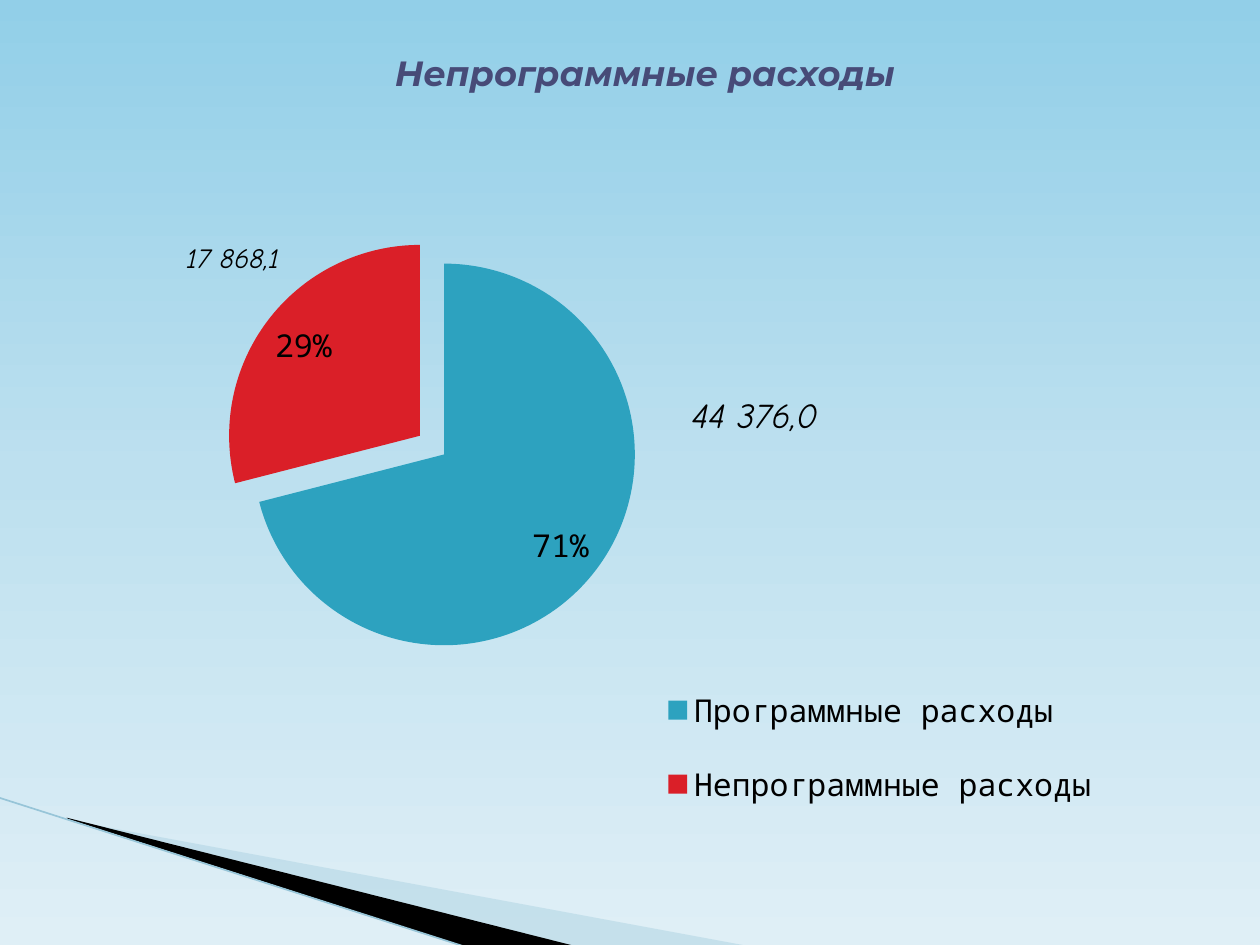
import pptx
import pptx.chart.data
import pptx.dml.color
import pptx.enum.chart
import pptx.enum.shapes
import pptx.enum.text
import pptx.oxml
import pptx.oxml.ns
import pptx.util
from lxml import etree
from pptx.util import Inches

COLORS = {
    "sky": "92CFE8", "haze": "BDE0EF", "horizon": "DFEFF6",
    "wedge": "A0CBDC", "black": "000000", "edge": "97C5D8",
    "title": "474B78", "program": "2DA2BF", "other": "DA1F28",
}
COLORS = {name: pptx.dml.color.RGBColor.from_string(value) for name, value in COLORS.items()}
qn = pptx.oxml.ns.qn


def format_font(font, color, **values):
    for name, value in values.items():
        setattr(font, name, value)
    font.color.rgb = COLORS[color]


def set_layout(parent, before, bounds, inner=False):
    """Place a chart part by fractions of the chart area."""
    for old in parent.findall(qn("c:layout")):
        parent.remove(old)
    layout = etree.Element(qn("c:layout"))
    manual = etree.SubElement(layout, qn("c:manualLayout"))
    values = [("layoutTarget", "inner")] if inner else []
    values += [("xMode", "edge"), ("yMode", "edge"), *zip("xywh", bounds)]
    for name, value in values:
        etree.SubElement(manual, qn(f"c:{name}")).set("val", str(value))
    parent.find(qn(before)).addprevious(layout)


deck = pptx.Presentation()
deck.slide_width, deck.slide_height = Inches(10), Inches(7.5)
page = deck.slides.add_slide(deck.slide_layouts[5])

# Background gradient, top to bottom
sky = page.background.fill
sky.gradient()
sky.gradient_angle = 270
for stop, name, position in zip(sky.gradient_stops, ("sky", "horizon"), (0, 1)):
    stop.color.rgb = COLORS[name]
    stop.position = position
stops = page.background._cSld.find(".//" + qn("a:gsLst"))
middle = etree.Element(qn("a:gs"), pos="50000")
etree.SubElement(middle, qn("a:srgbClr")).set("val", str(COLORS["haze"]))
stops.insert(1, middle)

# Corner wedges
wedges = [
    ("wedge", 40, [(0.55, 6.51), (5.95, 7.51), (4.56, 7.51), (0.55, 6.5)]),
    ("black", 100, [(0.53, 6.49), (4.57, 7.51), (3.72, 7.52), (0.54, 6.5)]),
]
for color, opacity, points in wedges:
    corners = [(Inches(x), Inches(y)) for x, y in points]
    builder = page.shapes.build_freeform(*corners[0])
    builder.add_line_segments(corners[1:])
    wedge = builder.convert_to_shape()
    wedge.shadow.inherit = False
    wedge.fill.solid()
    wedge.fill.fore_color.rgb = COLORS[color]
    wedge.line.fill.background()
    if opacity < 100:
        shade = wedge._element.spPr.find(qn("a:solidFill"))[0]
        etree.SubElement(shade, qn("a:alpha")).set("val", str(opacity * 1000))

edge = page.shapes.add_connector(
    pptx.enum.shapes.MSO_CONNECTOR.STRAIGHT,
    Inches(-0.01), Inches(6.33), Inches(3.71), Inches(7.52))
edge.line.color.rgb = COLORS["edge"]
edge.line.width = pptx.util.Pt(0.95)
etree.SubElement(edge._element.spPr, qn("a:effectLst"))

# Pie chart
data = pptx.chart.data.CategoryChartData()
data.categories = ["Программные расходы", "Непрограммные расходы"]
data.add_series("Series 1", (0.71, 0.29), number_format="0%")
chart = page.shapes.add_chart(
    pptx.enum.chart.XL_CHART_TYPE.PIE,
    Inches(0.98), Inches(1.31), Inches(7.95), Inches(5.67), data).chart
chart.has_title = False
format_font(chart.font, "black", name="Noto Sans Mono", size=pptx.util.Pt(18))
chart.has_legend = True
chart.legend.position = pptx.enum.chart.XL_LEGEND_POSITION.RIGHT
chart.legend.include_in_layout = False
set_layout(chart.legend._element, "c:overlay", (0.53, 0.69, 0.45, 0.25))

plot = chart.plots[0]
plot.vary_by_categories = True
set_layout(plot._element.getparent(), "c:pieChart", (0.076, 0.045, 0.461, 0.691), inner=True)
series = plot.series[0]
for index, (color, offset) in enumerate([("program", 9), ("other", 7)]):
    fill = series.points[index].format.fill
    fill.solid()
    fill.fore_color.rgb = COLORS[color]
    slice_xml = series._element.findall(qn("c:dPt"))[index]
    explosion = etree.Element(qn("c:explosion"), val=str(offset))
    slice_xml.find(qn("c:spPr")).addprevious(explosion)
series._element.find(qn("c:dPt")).addprevious(etree.Element(qn("c:explosion"), val="21"))

labels = series.data_labels
labels.show_value = True
labels.number_format = "0%"
labels.number_format_is_linked = False
labels.position = pptx.enum.chart.XL_LABEL_POSITION.INSIDE_END
format_font(labels.font, "black", name="Noto Sans Mono", size=pptx.util.Pt(18))

# Title and amounts
texts = [
    (page.shapes.title, "Непрограммные расходы", (0.83, 0.36, 8.58, 0.44),
     "title", {"name": "Montserrat", "size": pptx.util.Pt(20), "bold": True}),
    (None, "17 868,1", (1.38, 1.86, 1.18, 0.37),
     "black", {"name": "Comic Neue", "size": pptx.util.Pt(16)}),
    (None, "44 376,0", (5.39, 3.07, 2.1, 0.44),
     "black", {"name": "Comic Neue", "size": pptx.util.Pt(20)}),
]
for box, words, bounds, color, values in texts:
    bounds = [Inches(value) for value in bounds]
    align = pptx.enum.text.PP_ALIGN.CENTER if box else pptx.enum.text.PP_ALIGN.LEFT
    box = box or page.shapes.add_textbox(*bounds)
    box.left, box.top, box.width, box.height = bounds
    frame = box.text_frame
    frame.word_wrap = True
    frame.auto_size = pptx.enum.text.MSO_AUTO_SIZE.SHAPE_TO_FIT_TEXT
    frame.vertical_anchor = pptx.enum.text.MSO_ANCHOR.TOP
    para = frame.paragraphs[0]
    para.alignment = align
    span = para.add_run()
    span.text = words
    format_font(span.font, color, italic=True, **values)

deck.save("out.pptx")
